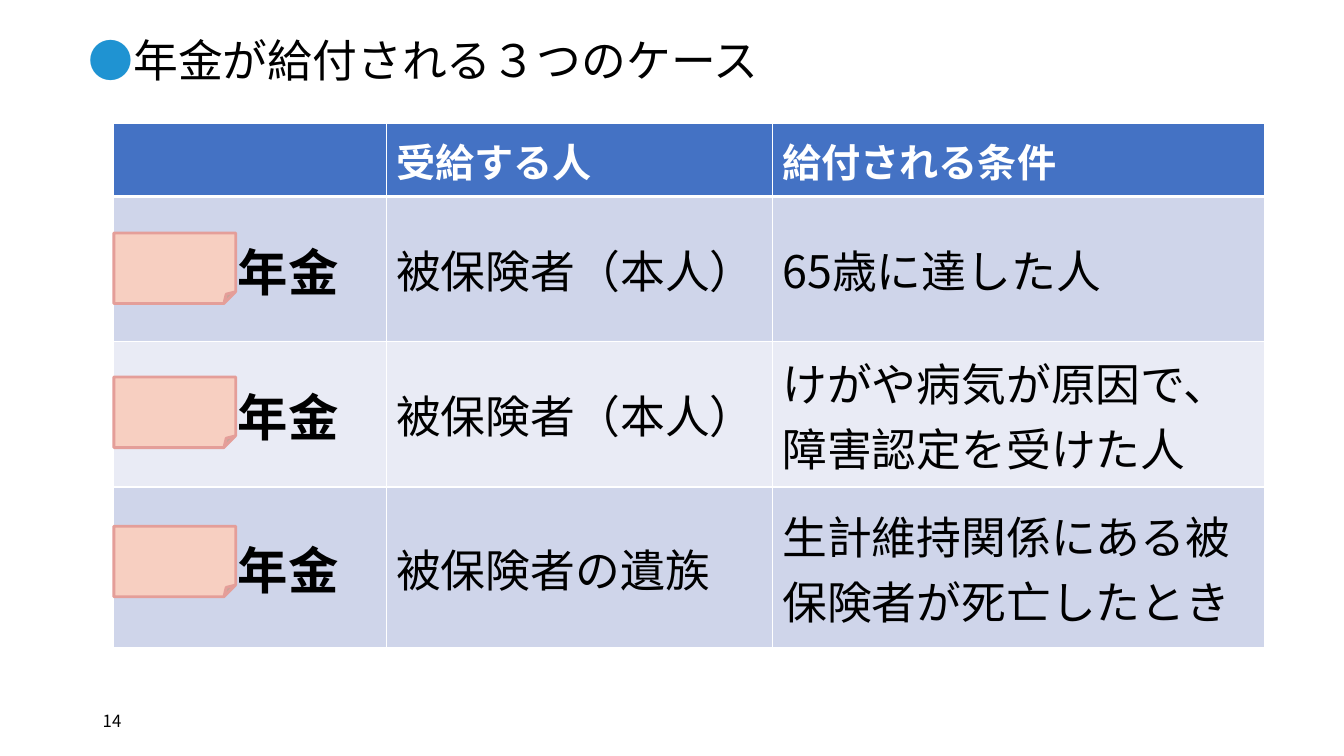
import pptx
import pptx.dml.color
import pptx.enum.shapes
import pptx.enum.text
import pptx.oxml
import pptx.oxml.ns
import pptx.util
from pptx.util import Cm

FONT = "Noto Sans CJK JP"
COLORS = {
    "text": "000000", "white": "FFFFFF", "bullet": "1F93D2",
    "header": "4472C4", "odd_row": "CFD5EA", "even_row": "E9EBF5",
    "note": "F7CFC1", "note_edge": "E49E99",
}
TABLE_LEFT, TABLE_TOP = 2.87, 3.12
COLUMN_WIDTHS = [6.86, 9.73, 12.42]
ROW_HEIGHTS = [1.83, 3.66, 3.66, 4.06]
HEADINGS = ["", "受給する人", "給付される条件"]
PENSIONS = [
    ("被保険者（本人）", "65歳に達した人"),
    ("被保険者（本人）", "けがや病気が原因で、障害認定を受けた人"),
    ("被保険者の遺族", "生計維持関係にある被保険者が死亡したとき"),
]
NOTE_TOPS = [5.87, 9.5, 13.26]
NOTE_WIDTH, NOTE_HEIGHT = 3.07, 1.78


def rgb(name):
    return pptx.dml.color.RGBColor.from_string(COLORS[name])


def write(frame, parts, size, bold=False):
    """Fill the first paragraph with (text, colour name) parts in one font."""
    paragraph = frame.paragraphs[0]
    font = paragraph.font
    font.name, font.size, font.bold = FONT, pptx.util.Pt(size), bold
    east_asian = pptx.oxml.parse_xml(
        f'<a:ea {pptx.oxml.ns.nsdecls("a")} typeface="{FONT}"/>')
    font._rPr.find(pptx.oxml.ns.qn("a:latin")).addnext(east_asian)
    for text, color in parts:
        run = paragraph.add_run()
        run.text = text
        run.font.color.rgb = rgb(color)


def add_text(slide, left, top, width, height, parts, size, anchor):
    frame = slide.shapes.add_textbox(Cm(left), Cm(top), Cm(width), Cm(height)).text_frame
    frame.word_wrap = True
    frame.vertical_anchor = anchor
    write(frame, parts, size)


def add_borders(cell, top_width, bottom_width):
    properties = cell._tc.get_or_add_tcPr()
    for side, width in (("L", 1), ("R", 1), ("T", top_width), ("B", bottom_width)):
        properties.append(pptx.oxml.parse_xml(
            f'<a:ln{side} {pptx.oxml.ns.nsdecls("a")} w="{pptx.util.Pt(width)}">'
            f'<a:solidFill><a:srgbClr val="{COLORS["white"]}"/></a:solidFill>'
            f'</a:ln{side}>'))


def fill_cell(cell, parts, size, bold, background, top_width=1, bottom_width=1):
    add_borders(cell, top_width, bottom_width)
    cell.fill.solid()
    cell.fill.fore_color.rgb = rgb(background)
    cell.vertical_anchor = pptx.enum.text.MSO_ANCHOR.MIDDLE
    write(cell.text_frame, parts, size, bold)


def add_pension_table(slide):
    table = slide.shapes.add_table(
        len(ROW_HEIGHTS), len(COLUMN_WIDTHS), Cm(TABLE_LEFT), Cm(TABLE_TOP),
        Cm(sum(COLUMN_WIDTHS)), Cm(sum(ROW_HEIGHTS))).table
    table.first_row = table.horz_banding = False
    for column, width in zip(table.columns, COLUMN_WIDTHS):
        column.width = Cm(width)
    for row, height in zip(table.rows, ROW_HEIGHTS):
        row.height = Cm(height)

    for column, heading in enumerate(HEADINGS):
        parts = [(heading, "white")] if heading else []
        fill_cell(table.cell(0, column), parts, 28, True, "header", bottom_width=3)
    for row, (recipient, condition) in enumerate(PENSIONS, 1):
        band = "odd_row" if row % 2 else "even_row"
        top_width = 3 if row == 1 else 1
        table.cell(row, 0).margin_left = Cm(NOTE_WIDTH + 0.05)
        for column, text in enumerate(("年金", recipient, condition)):
            is_name = column == 0
            fill_cell(table.cell(row, column), [(text, "text")],
                      36 if is_name else 32, is_name, band, top_width)


def add_note(slide, top):
    """Place a folded note in front of the word for pension."""
    note = slide.shapes.add_shape(
        pptx.enum.shapes.MSO_SHAPE.FOLDED_CORNER,
        Cm(TABLE_LEFT), Cm(top), Cm(NOTE_WIDTH), Cm(NOTE_HEIGHT))
    note.shadow.inherit = False
    note.fill.solid()
    note.fill.fore_color.rgb = rgb("note")
    note.line.color.rgb = rgb("note_edge")
    note.line.width = pptx.util.Pt(2)


def main():
    deck = pptx.Presentation()
    deck.slide_width, deck.slide_height = Cm(33.87), Cm(19.05)
    slide = deck.slides.add_slide(deck.slide_layouts[6])
    anchors = pptx.enum.text.MSO_ANCHOR
    add_text(slide, 2.34, 17.65, 7.62, 1.02, [("14", "text")], 12, anchors.MIDDLE)
    add_text(slide, 1.98, 0.69, 21.49, 1.63,
             [("●", "bullet"), ("年金が給付される３つのケース", "text")], 32, anchors.TOP)
    add_pension_table(slide)
    for top in NOTE_TOPS:
        add_note(slide, top)
    deck.save("out.pptx")


if __name__ == "__main__":
    main()
